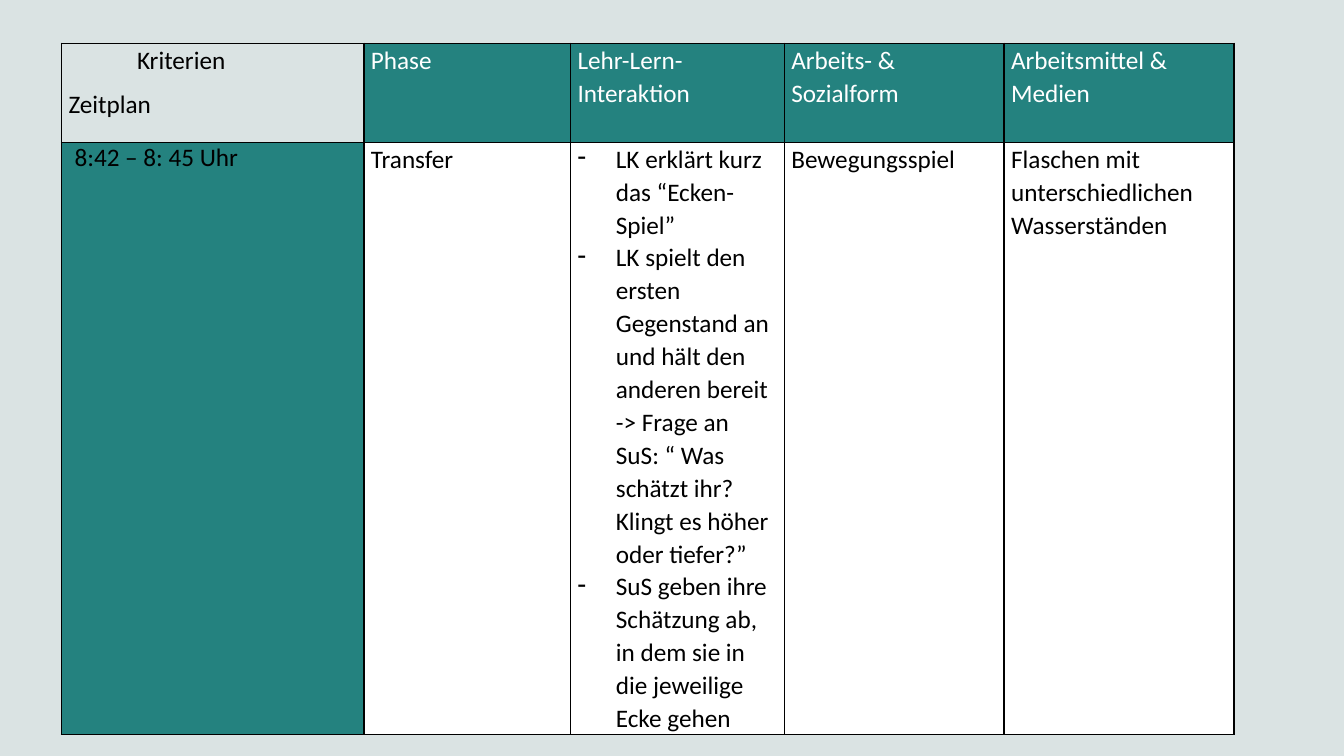
from lxml import etree
from pptx import Presentation
from pptx.dml.color import RGBColor
from pptx.oxml.ns import qn
from pptx.util import Inches, Pt

FONT, SIZE = "Calibri", 18
TEAL, PALE, WHITE, BLACK = "24827F", "DAE3E3", "FFFFFF", "000000"
SLIDE_W, SLIDE_H = 13.33, 7.5
GRID_COLS, GRID_ROWS = 133.3, 75
BORDER_SIDES = ("a:lnL", "a:lnR", "a:lnT", "a:lnB")

COLUMN_WIDTHS = [30, 20.5, 21.2, 21.8, 22.8]
ROW_HEIGHTS = [9.8, 58.7]
HEADERS = ["Phase", "Lehr-Lern-Interaktion", "Arbeits- & Sozialform",
           "Arbeitsmittel & Medien"]
TIME = "8:42 – 8: 45 Uhr"
STEPS = [
    "LK erklärt kurz das “Ecken-Spiel”",
    "LK spielt den ersten Gegenstand an und hält den anderen bereit "
    "-> Frage an SuS: “ Was schätzt ihr? Klingt es höher oder tiefer?”",
    "SuS geben ihre Schätzung ab, in dem sie in die jeweilige Ecke gehen",
]
MEDIA = "Flaschen mit unterschiedlichen Wasserständen"


def rgb(value):
    return RGBColor.from_string(value)


class LessonSlide:
    """Draws a lesson plan on a grid of tenths of an inch."""

    def __init__(self, prs):
        self.s = prs.slides.add_slide(prs.slide_layouts[6])
        self.unit_x = prs.slide_width / GRID_COLS
        self.unit_y = prs.slide_height / GRID_ROWS

    def background(self, color):
        fill = self.s.background.fill
        fill.solid()
        fill.fore_color.rgb = rgb(color)

    def table(self, left, top, widths, heights):
        x, y, w, h = (int(n) for n in (
            left * self.unit_x, top * self.unit_y,
            sum(widths) * self.unit_x, sum(heights) * self.unit_y))
        table = self.s.shapes.add_table(len(heights), len(widths), x, y, w, h).table
        table.first_row = table.horz_banding = False
        for column, width in zip(table.columns, widths):
            column.width = int(width * self.unit_x)
        for row, height in zip(table.rows, heights):
            row.height = int(height * self.unit_y)
        return table

    def border(self, cell):
        tc_pr = cell._tc.get_or_add_tcPr()
        for side in BORDER_SIDES:
            ln = etree.SubElement(tc_pr, qn(side), w=str(Pt(1)))
            fill = etree.SubElement(ln, qn("a:solidFill"))
            etree.SubElement(fill, qn("a:srgbClr"), val=BLACK)

    def cell(self, cell, texts, fill=None, color=BLACK, bullet=None,
             indent=0, spacing=1.07):
        cell.margin_left = cell.margin_right = Inches(0.07)
        cell.margin_top = cell.margin_bottom = 0
        self.border(cell)
        if fill:
            cell.fill.solid()
            cell.fill.fore_color.rgb = rgb(fill)
        else:
            cell.fill.background()
        tf = cell.text_frame
        tf.text = "\n".join(texts)
        for p in tf.paragraphs:
            self.paragraph(p, color, bullet, spacing)
        tf.paragraphs[-1].space_after = Pt(8)
        if indent:
            tf.paragraphs[0]._p.get_or_add_pPr().set("indent", str(Inches(indent)))

    def paragraph(self, p, color, bullet, spacing):
        if bullet:
            p_pr = p._p.get_or_add_pPr()
            p_pr.set("marL", str(Inches(0.38)))
            p_pr.set("indent", str(Inches(-0.38)))
            etree.SubElement(p_pr, qn("a:buChar"), char=bullet)
        p.line_spacing = spacing
        p.font.name, p.font.size = FONT, Pt(SIZE)
        p.font.color.rgb = rgb(color)


def main():
    prs = Presentation()
    prs.slide_width, prs.slide_height = Inches(SLIDE_W), Inches(SLIDE_H)
    slide = LessonSlide(prs)
    slide.background(PALE)
    plan = slide.table(6.1, 4.3, COLUMN_WIDTHS, ROW_HEIGHTS)

    corner = plan.cell(0, 0)
    slide.cell(corner, ["Kriterien", "Zeitplan"], indent=0.68)
    corner.text_frame.paragraphs[0].space_after = Pt(8)
    for column, header in enumerate(HEADERS, start=1):
        slide.cell(plan.cell(0, column), [header], TEAL, WHITE)

    slide.cell(plan.cell(1, 0), [TIME], TEAL, indent=0.06, spacing=1.0)
    slide.cell(plan.cell(1, 1), ["Transfer"], WHITE)
    slide.cell(plan.cell(1, 2), STEPS, WHITE, bullet="-")
    slide.cell(plan.cell(1, 3), ["Bewegungsspiel"], WHITE)
    slide.cell(plan.cell(1, 4), [MEDIA], WHITE)
    prs.save("out.pptx")


if __name__ == "__main__":
    main()
